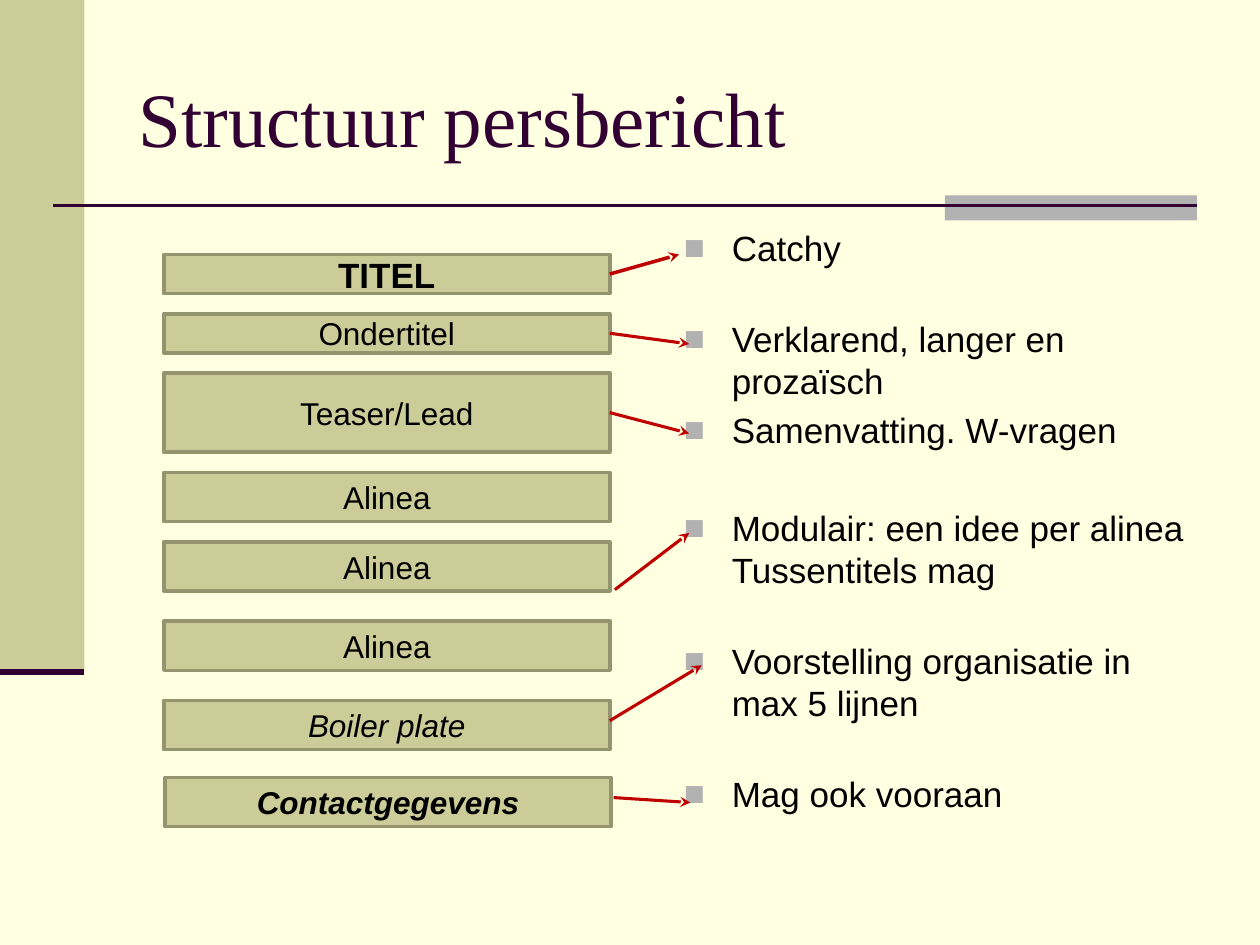
from dataclasses import dataclass

from lxml.etree import SubElement
from pptx import Presentation
from pptx.dml.color import RGBColor
from pptx.enum.shapes import MSO_CONNECTOR, MSO_SHAPE
from pptx.enum.text import MSO_ANCHOR, PP_ALIGN
from pptx.oxml.ns import qn
from pptx.util import Inches, Pt


@dataclass(frozen=True)
class Theme:
    paper: str = "FFFFE1"
    sand: str = "CCCC99"
    edge: str = "94946F"
    grey: str = "B2B2B2"
    plum: str = "330033"
    red: str = "BF0000"
    ink: str = "000000"
    heading_font: str = "Times New Roman"
    body_font: str = "Arial"
    heading_size: int = 44
    body_size: int = 20
    label_size: int = 18
    leading: int = 24


class SlideBuilder:
    """Draws styled elements on the current slide."""

    def __init__(self, presentation, theme):
        self.theme = theme
        self.slide = presentation.slides.add_slide(presentation.slide_layouts[6])
        background = self.slide.background.fill
        background.solid()
        background.fore_color.rgb = RGBColor.from_string(theme.paper)

    def style(self, paragraph, size, color, name, bold=False, italic=False):
        font = paragraph.font
        font.size, font.name = Pt(size), name
        font.bold, font.italic = bold, italic
        font.color.rgb = RGBColor.from_string(color)

    def block(self, left, top, width, height, fill, edge=None):
        block = self.slide.shapes.add_shape(
            MSO_SHAPE.RECTANGLE, Inches(left), Inches(top), Inches(width), Inches(height))
        block.shadow.inherit = False
        block.fill.solid()
        block.fill.fore_color.rgb = RGBColor.from_string(fill)
        if edge:
            block.line.color.rgb = RGBColor.from_string(edge)
            block.line.width = Pt(2)
        else:
            block.line.fill.background()
        return block

    def section(self, label, left, top, height, size, bold=False, italic=False):
        section = self.block(left, top, 3.54, height, self.theme.sand, self.theme.edge)
        section.text_frame.vertical_anchor = MSO_ANCHOR.MIDDLE
        paragraph = section.text_frame.paragraphs[0]
        paragraph.text = label
        paragraph.alignment = PP_ALIGN.CENTER
        self.style(paragraph, size, self.theme.ink, self.theme.body_font, bold, italic)
        return section

    def line(self, start, end, color, width):
        line = self.slide.shapes.add_connector(
            MSO_CONNECTOR.STRAIGHT, *(Inches(value) for value in (*start, *end)))
        line.line.color.rgb = RGBColor.from_string(color)
        line.line.width = Pt(width)
        SubElement(line._element.spPr, qn("a:effectLst"))
        return line

    def arrow(self, start, end, width=1.75, source=None):
        arrow = self.line(start, end, self.theme.red, width)
        SubElement(arrow._element.spPr.find(qn("a:ln")), qn("a:tailEnd"), type="stealth")
        if source is not None:
            arrow.begin_connect(source, 3)

    def text_frame(self, left, top, width, height):
        frame = self.slide.shapes.add_textbox(
            Inches(left), Inches(top), Inches(width), Inches(height)).text_frame
        frame.word_wrap = True
        return frame

    def title(self, text):
        frame = self.text_frame(1, 0.3, 8.5, 1.25)
        frame.vertical_anchor = MSO_ANCHOR.MIDDLE
        paragraph = frame.paragraphs[0]
        paragraph.text = text
        self.style(paragraph, self.theme.heading_size, self.theme.plum, self.theme.heading_font)

    def bullets(self, remarks):
        frame = self.text_frame(5.33, 1.75, 4.17, 4.95)
        for index, (text, space_before) in enumerate(remarks):
            paragraph = frame.add_paragraph() if index else frame.paragraphs[0]
            paragraph.text = text
            paragraph.line_spacing = Pt(self.theme.leading)
            paragraph.space_before = Pt(space_before)
            properties = paragraph._p.get_or_add_pPr()
            properties.set("marL", str(Inches(0.38)))
            properties.set("indent", str(Inches(-0.38)))
            SubElement(SubElement(properties, qn("a:buClr")), qn("a:srgbClr"), val=self.theme.grey)
            SubElement(properties, qn("a:buFont"), typeface=self.theme.body_font)
            SubElement(properties, qn("a:buChar"), char="■")
            self.style(paragraph, self.theme.body_size, self.theme.ink, self.theme.body_font)


def main():
    presentation = Presentation()
    presentation.slide_width, presentation.slide_height = Inches(10), Inches(7.5)
    theme = Theme()
    builder = SlideBuilder(presentation, theme)

    builder.block(0, 0, 0.67, 5.33, theme.sand)
    builder.block(7.5, 1.55, 2, 0.2, theme.grey)
    builder.line((0.42, 1.63), (9.5, 1.63), theme.plum, 1.5)
    builder.line((0, 5.33), (0.67, 5.33), theme.plum, 3.5)
    builder.title("Structuur persbericht")

    gap = theme.leading + 4
    builder.bullets([
        ("Catchy", 0),
        ("Verklarend, langer en prozaïsch", gap),
        ("Samenvatting. W-vragen", 4),
        ("Modulair: een idee per alinea\nTussentitels mag", gap + 4),
        ("Voorstelling organisatie in max 5 lijnen", gap),
        ("Mag ook vooraan", gap),
    ])

    headline = builder.section("TITEL", 1.3, 2.02, 0.31, theme.body_size, bold=True)
    subtitle = builder.section("Ondertitel", 1.3, 2.49, 0.31, theme.label_size)
    lead = builder.section("Teaser/Lead", 1.3, 2.96, 0.63, theme.label_size)
    for top in (3.75, 4.3, 4.93):
        builder.section("Alinea", 1.3, top, 0.39, theme.label_size)
    builder.section("Boiler plate", 1.3, 5.56, 0.39, theme.label_size, italic=True)
    builder.section("Contactgegevens", 1.31, 6.17, 0.39, theme.label_size, bold=True, italic=True)

    builder.arrow((4.84, 2.18), (5.39, 2.02), 2, headline)
    builder.arrow((4.84, 2.65), (5.47, 2.73), source=subtitle)
    builder.arrow((4.84, 3.28), (5.47, 3.44), source=lead)
    builder.arrow((4.88, 4.68), (5.47, 4.23))
    builder.arrow((4.84, 5.72), (5.57, 5.28))
    builder.arrow((4.87, 6.33), (5.48, 6.37))

    presentation.save("out.pptx")


if __name__ == "__main__":
    main()
